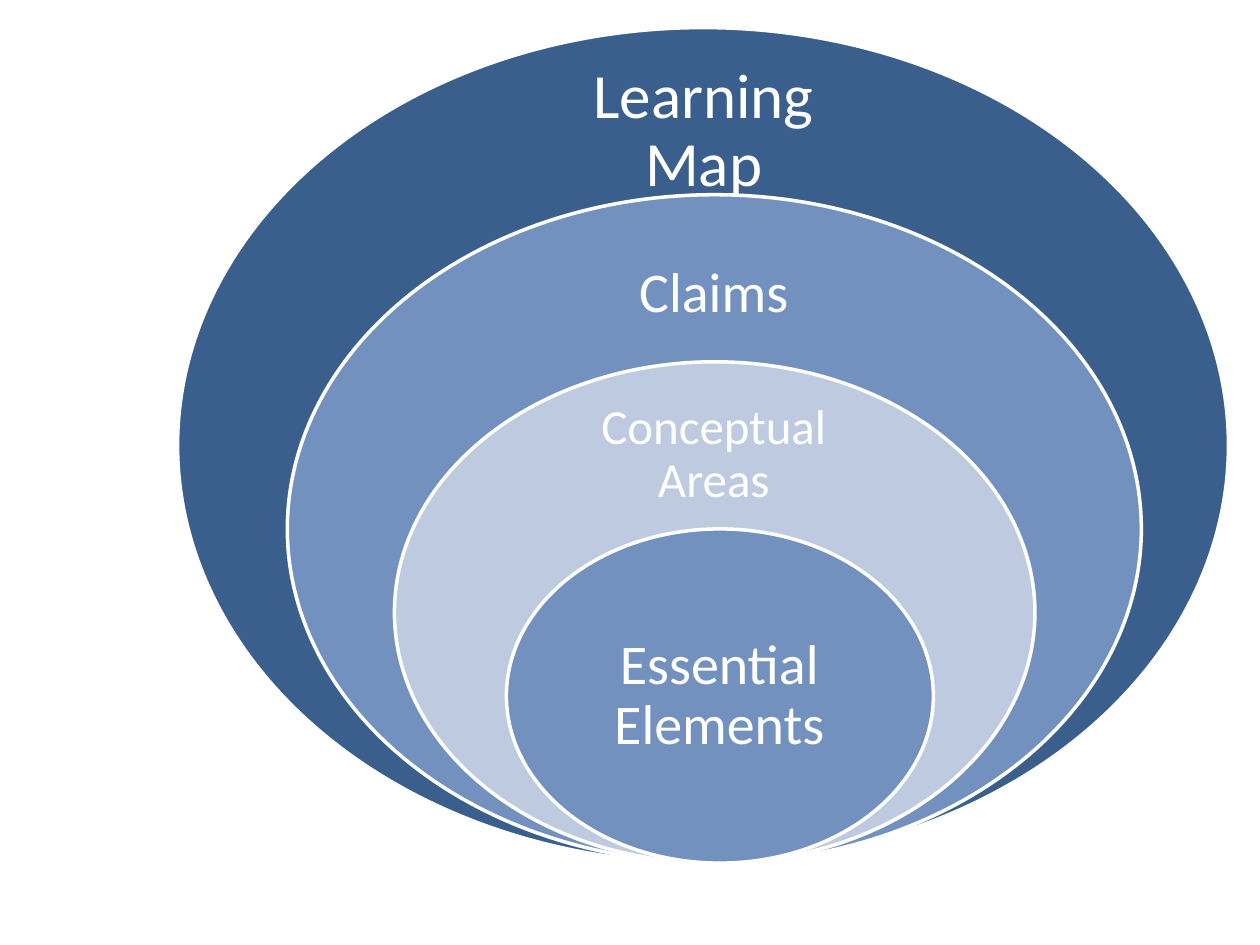
from pptx import Presentation
from pptx.dml.color import RGBColor
from pptx.enum.shapes import MSO_SHAPE
from pptx.enum.text import MSO_ANCHOR, PP_ALIGN
from pptx.util import Pt

OVAL = MSO_SHAPE.OVAL
MIDDLE = MSO_ANCHOR.MIDDLE
CENTER = PP_ALIGN.CENTER
WHITE = "FFFFFF"
BOTTOM = 493.2  # all ovals rest on this line
OUTER_HEIGHT = 477.4


def color(value):
    return RGBColor.from_string(value)


prs = Presentation()
prs.slide_width, prs.slide_height = Pt(720), Pt(540)
slide = prs.slides.add_slide(prs.slide_layouts[6])

# label, fill, oval left and width, text box, side and top insets, font size
rings = [
    ("Learning Map", "3A5F8C", 101.5, 600.5, (318.2, 39.6, 167.8, 71.3), (20.2, 20.2), 36),
    ("Claims", "7391BF", 164.2, 488, (322.6, 133.9, 170.6, 68.4), (18, 18), 32),
    ("Conceptual Areas", "BECADF", 225.4, 366, (322.6, 228.2, 170.6, 64.1), (15.8, 15.8), 28),
    ("Essential Elements", "7391BF", 289.4, 244, (324.7, 349.9, 172.8, 95.8), (7.2, 18), 32),
]

for i, (label, fill, left, width, box, (side, top), size) in enumerate(rings):
    height = OUTER_HEIGHT * (5 - i) / 5
    s = slide.shapes.add_shape(OVAL, Pt(left), Pt(BOTTOM - height), Pt(width), Pt(height))
    s.shadow.inherit = False
    s.fill.solid()
    s.fill.fore_color.rgb = color(fill)
    s.line.color.rgb = color(WHITE)
    s.line.width = Pt(2)

    tf = slide.shapes.add_textbox(*map(Pt, box)).text_frame
    frame_format = {
        "word_wrap": True, "vertical_anchor": MIDDLE,
        "margin_left": Pt(side), "margin_right": Pt(side),
        "margin_top": Pt(top), "margin_bottom": Pt(top),
    }
    for name, value in frame_format.items():
        setattr(tf, name, value)
    p = tf.paragraphs[0]
    p.alignment = CENTER
    p.line_spacing = 0.9
    r = p.add_run()
    r.text = label
    r.font.name = "Calibri"
    r.font.size = Pt(size)
    r.font.color.rgb = color(WHITE)

prs.save("out.pptx")
